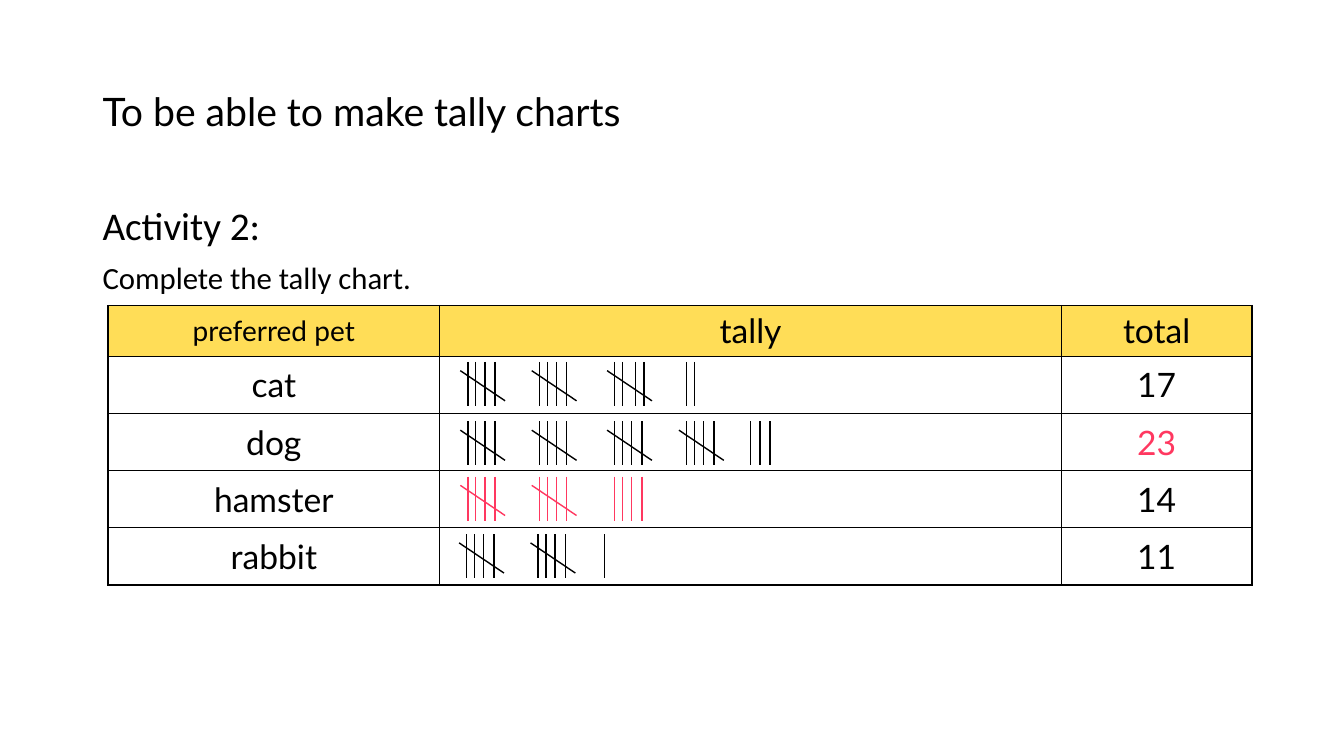
from pptx import Presentation
from pptx.dml.color import RGBColor
from pptx.enum.shapes import MSO_CONNECTOR
from pptx.enum.text import MSO_ANCHOR, PP_ALIGN
from pptx.oxml.ns import qn
from pptx.util import Cm, Pt
from lxml.etree import SubElement

BLACK = RGBColor(0x00, 0x00, 0x00)
WHITE = RGBColor(0xFF, 0xFF, 0xFF)
YELLOW = RGBColor(0xFF, 0xDD, 0x57)
PINK = RGBColor(0xFF, 0x38, 0x60)

HEADERS = [("preferred pet", 20), ("tally", 24), ("total", 24)]
COLUMN_WIDTHS = [8.36, 15.67, 4.8]
HEADER_HEIGHT = 1.28
ROW_HEIGHT = 1.44

MARKS = (0, 0.2, 0.43, 0.69)
WIDE_MARKS = (0, 0.2, 0.53, 0.74)
PETS = [
    ("cat", 17, BLACK, BLACK, 9.12,
     [(11.79, MARKS), (13.59, MARKS), (15.49, WIDE_MARKS), (17.3, MARKS)]),
    ("dog", 23, BLACK, PINK, 10.62,
     [(11.79, MARKS), (13.59, MARKS), (15.49, MARKS), (17.3, MARKS),
      (18.92, (0, 0.23, 0.48))]),
    ("hamster", 14, PINK, BLACK, 12.01,
     [(11.79, MARKS), (13.59, MARKS), (15.49, MARKS)]),
    ("rabbit", 11, BLACK, BLACK, 13.46,
     [(11.76, MARKS), (13.56, MARKS), (15.24, MARKS)]),
]


def apply_format(target, values):
    for name, value in values.items():
        setattr(target, name, value)


def write_paragraph(p, text, size, font, color=BLACK, **layout):
    apply_format(p, layout)
    r = p.add_run()
    r.text = text
    apply_format(r.font, {"size": Pt(size), "name": font, "bold": False})
    r.font.color.rgb = color


def place(sp, left, top, width, height):
    apply_format(sp, {"left": Cm(left), "top": Cm(top),
                      "width": Cm(width), "height": Cm(height)})


def fill_title(sp, text):
    place(sp, 2.33, 1.02, 24.38, 3.68)
    tf = sp.text_frame
    apply_format(tf, {"vertical_anchor": MSO_ANCHOR.MIDDLE, "word_wrap": True})
    write_paragraph(tf.paragraphs[0], text, 28, "Lato",
                    alignment=PP_ALIGN.LEFT, line_spacing=0.9)


def fill_body(sp, lines):
    place(sp, 2.33, 5.08, 29.21, 12.09)
    tf = sp.text_frame
    tf.word_wrap = True
    for i, (text, size) in enumerate(lines):
        p = tf.add_paragraph() if i else tf.paragraphs[0]
        pPr = p._p.get_or_add_pPr()
        pPr.set("marL", "0")
        pPr.set("indent", "0")
        SubElement(pPr, qn("a:buNone"))
        write_paragraph(p, text, size, "Calibri", line_spacing=0.9,
                        space_before=Pt(10 if i else 0))


def add_borders(cell):
    tcPr = cell._tc.get_or_add_tcPr()
    for i, side in enumerate(("lnL", "lnR", "lnT", "lnB")):
        ln = tcPr.makeelement(qn(f"a:{side}"), {"w": str(Pt(1))})
        fill = SubElement(ln, qn("a:solidFill"))
        SubElement(fill, qn("a:srgbClr"), val=str(BLACK))
        tcPr.insert(i, ln)


def fill_cell(cell, text, size, color, background):
    cell.fill.solid()
    cell.fill.fore_color.rgb = background
    cell.vertical_anchor = MSO_ANCHOR.MIDDLE
    add_borders(cell)
    if text:
        write_paragraph(cell.text_frame.paragraphs[0], text, size, "Lato",
                        color, alignment=PP_ALIGN.CENTER)


def add_pet_table(slide):
    height = HEADER_HEIGHT + ROW_HEIGHT * len(PETS)
    table = slide.shapes.add_table(
        len(PETS) + 1, len(HEADERS), Cm(2.72), Cm(7.7),
        Cm(sum(COLUMN_WIDTHS)), Cm(height)).table
    apply_format(table, {"first_row": False, "horz_banding": False})
    for column, width in zip(table.columns, COLUMN_WIDTHS):
        column.width = Cm(width)
    for i, row in enumerate(table.rows):
        row.height = Cm(ROW_HEIGHT if i else HEADER_HEIGHT)
    for col, (text, size) in enumerate(HEADERS):
        fill_cell(table.cell(0, col), text, size, BLACK, YELLOW)
    for row, (pet, total, _, total_color, _, _) in enumerate(PETS, 1):
        for col, text in enumerate((pet, "", str(total))):
            color = total_color if col == 2 else BLACK
            fill_cell(table.cell(row, col), text, 24, color, WHITE)


def add_line(slide, x1, y1, x2, y2, color):
    line = slide.shapes.add_connector(
        MSO_CONNECTOR.STRAIGHT, Cm(x1), Cm(y1), Cm(x2), Cm(y2))
    line.line.color.rgb = color
    line.line.width = Pt(1)
    SubElement(line._element.spPr, qn("a:effectLst"))


def add_tally(slide, total, color, top, groups):
    fives, rest = divmod(total, 5)
    for i, (left, marks) in enumerate(groups):
        for offset in marks if i < fives else marks[:rest]:
            x = left + offset
            add_line(slide, x, top, x, top + 1.11, color)
        if i < fives:
            add_line(slide, left - 0.19, top + 0.22,
                     left + 0.94, top + 0.98, color)


def main():
    prs = Presentation()
    apply_format(prs, {"slide_width": Cm(33.87), "slide_height": Cm(19.05)})
    slide = prs.slides.add_slide(prs.slide_layouts[1])
    fill_title(slide.shapes.title, "To be able to make tally charts")
    fill_body(slide.placeholders[1],
              [("Activity 2:", 28), ("Complete the tally chart.", 22)])
    add_pet_table(slide)
    for _, total, color, _, top, groups in PETS:
        add_tally(slide, total, color, top, groups)
    prs.save("out.pptx")


if __name__ == "__main__":
    main()
